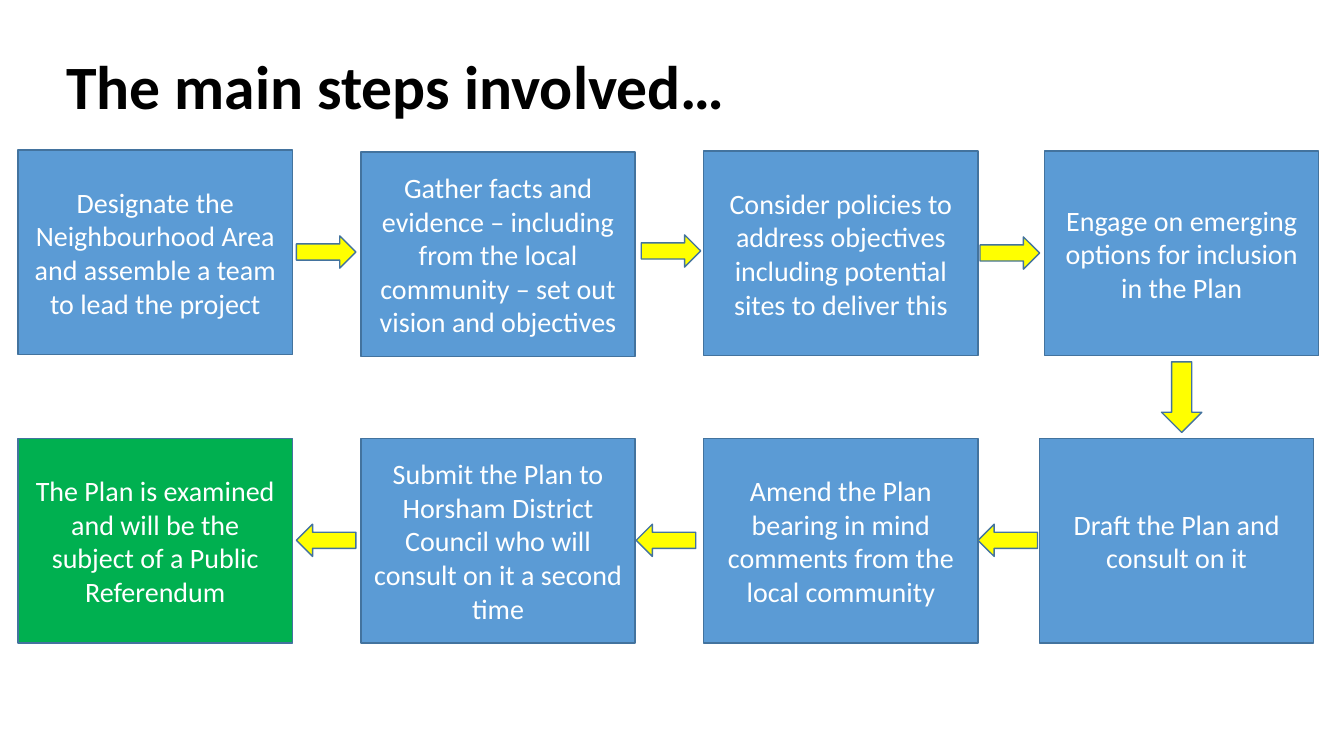
import pptx
import pptx.util
import pptx.dml.color
import pptx.enum.shapes
import pptx.enum.text

Inches = pptx.util.Inches
Pt = pptx.util.Pt
SHAPES = pptx.enum.shapes.MSO_SHAPE

COLOURS = {
    "title": "000000",
    "step": "5B9BD5",
    "final": "00B050",
    "arrow": "FFFF00",
    "outline": "43739E",
    "label": "FFFFFF",
}

BOX_WIDTH, BOX_HEIGHT = 2.72, 2.03
ARROW_WIDTH, ARROW_HEIGHT = 0.59, 0.32
LOWER_TOP, LOWER_ARROW_TOP = 4.35, 5.2

# left, top, text, fill, in reading order of the process
STEPS = [
    (0.18, 1.49, "Designate the Neighbourhood Area and assemble a team to lead the project", "step"),
    (3.58, 1.51, "Gather facts and evidence – including from the local community – "
                 "set out vision and objectives", "step"),
    (6.98, 1.5, "Consider policies to address objectives including potential sites to deliver this", "step"),
    (10.36, 1.5, "Engage on emerging options for inclusion in the Plan", "step"),
    (10.31, LOWER_TOP, "Draft the Plan and consult on it", "step"),
    (6.98, LOWER_TOP, "Amend the Plan bearing in mind comments from the local community", "step"),
    (3.58, LOWER_TOP, "Submit the Plan to Horsham District Council who will consult on it "
                      "a second time", "step"),
    (0.18, LOWER_TOP, "The Plan is examined and will be the subject of a Public Referendum", "final"),
]

FORWARD_ARROWS = [(2.94, 2.34), (6.36, 2.33), (9.72, 2.35)]
BACKWARD_ARROW_LEFTS = [9.7, 6.31, 2.94]


class ProcessSlide:
    """Holds the style and the slide that the elements are drawn on."""

    font_name = "Calibri"

    def __init__(self, slide):
        self.slide = slide

    def colour(self, name):
        return pptx.dml.color.RGBColor.from_string(COLOURS[name])

    def style_text(self, paragraph, size, colour, bold=False):
        font = paragraph.font
        font.name = self.font_name
        font.size = Pt(size)
        font.bold = bold
        font.color.rgb = self.colour(colour)

    def title(self, text, left, top, width, height):
        box = self.slide.shapes.add_textbox(Inches(left), Inches(top), Inches(width), Inches(height))
        frame = box.text_frame
        frame.word_wrap = True
        frame.vertical_anchor = pptx.enum.text.MSO_ANCHOR.MIDDLE
        paragraph = frame.paragraphs[0]
        paragraph.text = text
        paragraph.line_spacing = 0.9
        self.style_text(paragraph, 44, "title", bold=True)

    def outlined_shape(self, kind, left, top, width, height, fill):
        shape = self.slide.shapes.add_shape(kind, Inches(left), Inches(top), Inches(width), Inches(height))
        shape.shadow.inherit = False
        shape.fill.solid()
        shape.fill.fore_color.rgb = self.colour(fill)
        shape.line.color.rgb = self.colour("outline")
        shape.line.width = Pt(1)
        return shape

    def step(self, left, top, text, fill):
        shape = self.outlined_shape(SHAPES.RECTANGLE, left, top, BOX_WIDTH, BOX_HEIGHT, fill)
        frame = shape.text_frame
        frame.word_wrap = True
        frame.vertical_anchor = pptx.enum.text.MSO_ANCHOR.MIDDLE
        paragraph = frame.paragraphs[0]
        paragraph.text = text
        paragraph.alignment = pptx.enum.text.PP_ALIGN.CENTER
        self.style_text(paragraph, 20, "label")

    def side_arrow(self, left, top, rotation=0):
        arrow = self.outlined_shape(SHAPES.RIGHT_ARROW, left, top, ARROW_WIDTH, ARROW_HEIGHT, "arrow")
        arrow.rotation = rotation

    def down_arrow(self, left, top, width, height):
        self.outlined_shape(SHAPES.DOWN_ARROW, left, top, width, height, "arrow")


def main():
    presentation = pptx.Presentation()
    presentation.slide_width = Inches(13.33)
    presentation.slide_height = Inches(7.5)
    process = ProcessSlide(presentation.slides.add_slide(presentation.slide_layouts[6]))

    process.title("The main steps involved…", 0.56, 0.16, 11.5, 1.45)
    for left, top, text, fill in STEPS:
        process.step(left, top, text, fill)
    for left, top in FORWARD_ARROWS:
        process.side_arrow(left, top)
    process.down_arrow(11.52, 3.59, 0.4, 0.7)
    for left in BACKWARD_ARROW_LEFTS:
        process.side_arrow(left, LOWER_ARROW_TOP, rotation=180)

    presentation.save("out.pptx")


if __name__ == "__main__":
    main()
